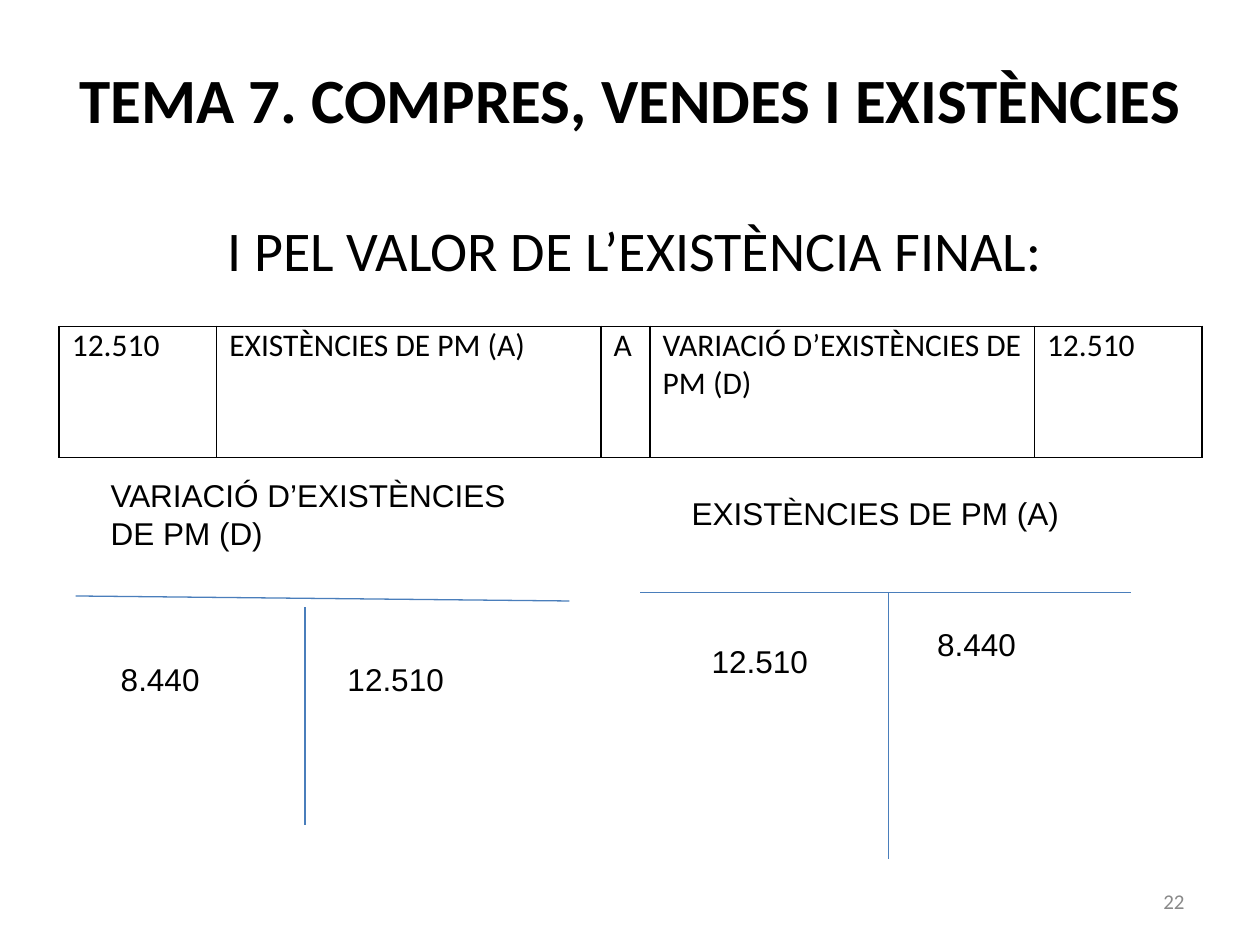
from dataclasses import dataclass

from lxml import etree
from pptx import Presentation
from pptx.dml.color import RGBColor
from pptx.enum.shapes import MSO_CONNECTOR
from pptx.enum.text import MSO_ANCHOR as Anchor, PP_ALIGN as Align
from pptx.oxml.ns import qn
from pptx.util import Inches, Pt


@dataclass(frozen=True)
class Theme:
    ink: str = "000000"
    muted: str = "898989"
    rule: str = "4A7EBB"
    heading_font: str = "Calibri"
    account_font: str = "Arial"
    title: int = 36
    subtitle: int = 32
    body: int = 18
    footer: int = 12
    rule_width: float = 0.75
    border_width: float = 1


THEME = Theme()


def write(frame, text, size=THEME.body, font=THEME.heading_font, color=THEME.ink,
          bold=False, align=Align.LEFT):
    paragraph = frame.paragraphs[0]
    paragraph.alignment = align
    run = paragraph.add_run()
    run.text = text
    run.font.size = Pt(size)
    run.font.name = font
    run.font.bold = bold
    run.font.color.rgb = RGBColor.from_string(color)


def add_text(slide, box, text, anchor=Anchor.TOP, top_inset=0.05, **text_format):
    frame = slide.shapes.add_textbox(*map(Inches, box)).text_frame
    frame.word_wrap = True
    frame.vertical_anchor = anchor
    frame.margin_top = Inches(top_inset)
    write(frame, text, **text_format)


def add_rule(slide, start, end):
    line = slide.shapes.add_connector(
        MSO_CONNECTOR.STRAIGHT, *map(Inches, (*start, *end)))
    line.line.color.rgb = RGBColor.from_string(THEME.rule)
    line.line.width = Pt(THEME.rule_width)
    etree.SubElement(line._element.spPr, qn("a:effectLst"))


def set_borders(cell):
    properties = cell._tc.get_or_add_tcPr()
    for position, side in enumerate(("a:lnL", "a:lnR", "a:lnT", "a:lnB")):
        border = etree.Element(qn(side), w=str(Pt(THEME.border_width)))
        fill = etree.SubElement(border, qn("a:solidFill"))
        etree.SubElement(fill, qn("a:srgbClr"), val=THEME.ink)
        properties.insert(position, border)


def add_journal_entry(slide, box, entry):
    """Lay out one entry row from (text, column width) pairs."""
    graphic = slide.shapes.add_table(1, len(entry), *map(Inches, box))
    table = graphic.table
    table.first_row = table.horz_banding = False
    for column, cell, (text, width) in zip(table.columns, table.rows[0].cells, entry):
        column.width = Inches(width)
        cell.margin_top = cell.margin_bottom = 0
        cell.fill.background()
        write(cell.text_frame, text)
        set_borders(cell)


def add_t_account(slide, bar, stem, labels):
    """Draw a T account; bar and stem are point pairs, labels are (text, box) pairs."""
    add_rule(slide, *bar)
    add_rule(slide, *stem)
    for text, box in labels:
        add_text(slide, box, text, font=THEME.account_font)


def add_headings(slide):
    add_text(slide, (0.39, 0.31, 9.22, 0.94), "TEMA 7. COMPRES, VENDES I EXISTÈNCIES",
             anchor=Anchor.MIDDLE, size=THEME.title, bold=True, align=Align.CENTER)
    add_text(slide, (0.47, 1.09, 9.14, 5.86), "I PEL VALOR DE L’EXISTÈNCIA FINAL:",
             top_inset=0.62, size=THEME.subtitle, align=Align.CENTER)


def main():
    presentation = Presentation()
    presentation.slide_width, presentation.slide_height = Inches(10), Inches(7.5)
    slide = presentation.slides.add_slide(presentation.slide_layouts[6])

    stock = "EXISTÈNCIES DE PM (A)"
    variation = "VARIACIÓ D’EXISTÈNCIES DE PM (D)"
    opening, closing = "8.440", "12.510"

    add_headings(slide)
    add_journal_entry(slide, (0.47, 2.59, 9.07, 1.04), [
        (closing, 1.25), (stock, 3.05), ("A", 0.39), (variation, 3.05), (closing, 1.33)])
    add_t_account(slide, ((0.6, 4.73), (4.52, 4.77)), ((2.42, 4.82), (2.42, 6.55)), [
        (variation, (0.78, 3.73, 3.44, 0.78)),
        (opening, (0.86, 5.19, 1.02, 0.7)),
        (closing, (2.66, 5.19, 1.17, 0.46))])
    add_t_account(slide, ((5.08, 4.7), (8.98, 4.7)), ((7.05, 4.71), (7.05, 6.82)), [
        (stock, (5.39, 3.87, 3.52, 0.64)),
        (closing, (5.55, 5.05, 1.25, 0.46)),
        (opening, (7.34, 4.91, 1.64, 0.63))])
    add_text(slide, (7.17, 6.95, 2.33, 0.4), "22", anchor=Anchor.MIDDLE,
             size=THEME.footer, color=THEME.muted, align=Align.RIGHT)

    presentation.save("out.pptx")


if __name__ == "__main__":
    main()
